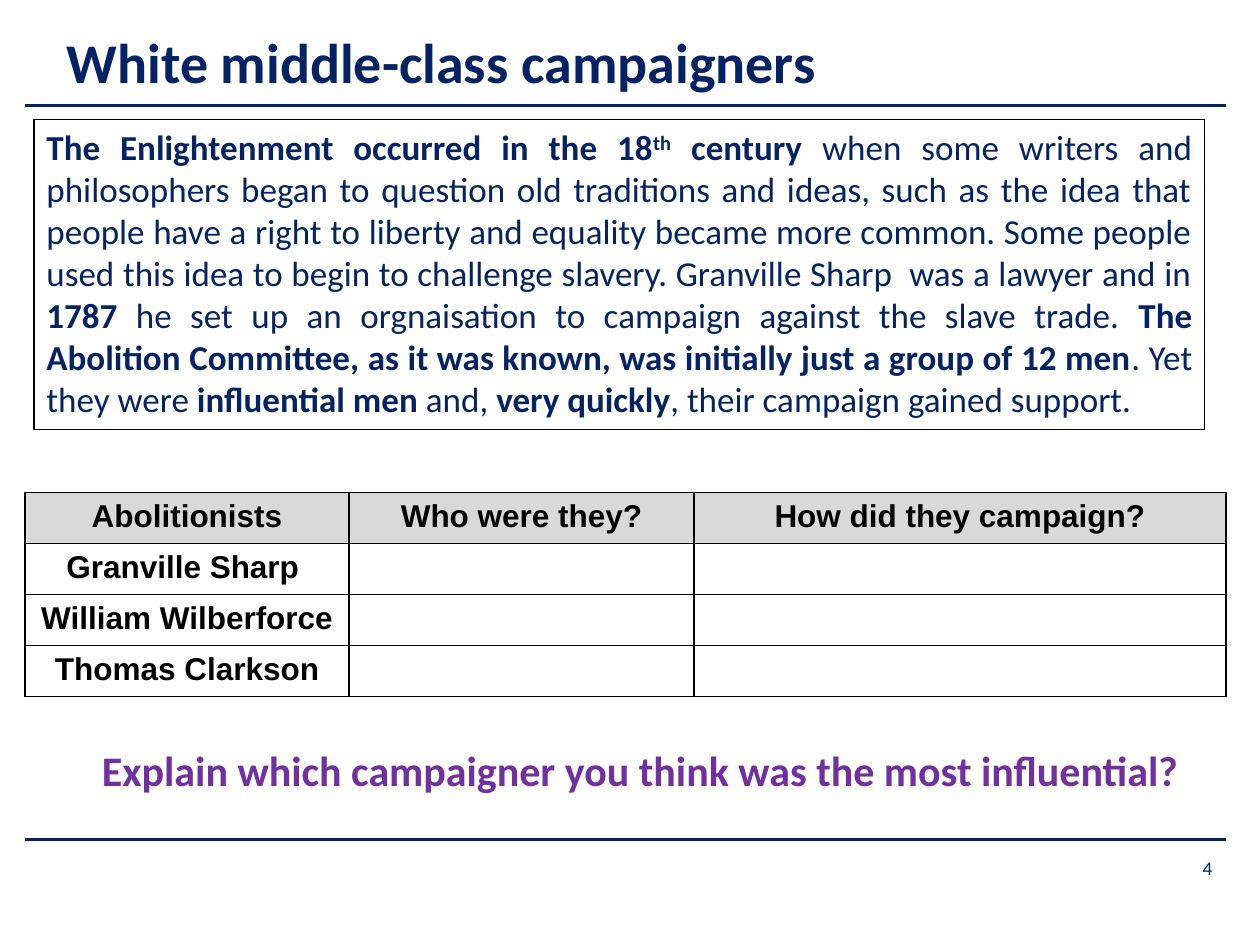
from dataclasses import dataclass

from lxml.etree import SubElement
from pptx import Presentation
from pptx.dml.color import RGBColor
from pptx.enum.shapes import MSO_CONNECTOR, MSO_SHAPE
from pptx.enum.text import MSO_ANCHOR, PP_ALIGN
from pptx.oxml.ns import qn
from pptx.util import Inches, Pt

COLUMNS, ROWS = 100, 75
SLIDE_WIDTH, SLIDE_HEIGHT = Inches(10), Inches(7.5)


@dataclass(frozen=True)
class Theme:
    navy: str = "052264"
    purple: str = "7030A0"
    black: str = "000000"
    white: str = "FFFFFF"
    header: str = "D9D9D9"
    text_font: str = "Calibri"
    table_font: str = "Arial"
    title_size: float = 32
    question_size: float = 24
    body_size: float = 20
    table_size: float = 18
    number_size: float = 11


THEME = Theme()

ENLIGHTENMENT = [
    ("The Enlightenment occurred in the 18", "bold"),
    ("th", "superscript"),
    (" century", "bold"),
    (" when some writers and philosophers began to question old traditions and "
     "ideas, such as the idea that people have a right to liberty and equality "
     "became more common. Some people used this idea to begin to challenge "
     "slavery. Granville Sharp  was a lawyer and in ", "plain"),
    ("1787", "bold"),
    (" he set up an orgnaisation to campaign against the slave trade. ", "plain"),
    ("The Abolition Committee, as it was known, was initially just a group of "
     "12 men", "bold"),
    (". Yet they were ", "plain"),
    ("influential men ", "bold"),
    ("and, ", "plain"),
    ("very quickly", "bold"),
    (", their campaign gained support. ", "plain"),
]
HEADINGS = ["Abolitionists", "Who were they?", "How did they campaign?"]
ABOLITIONISTS = ["Granville Sharp ", "William Wilberforce", "Thomas Clarkson"]


def across(columns):
    return round(SLIDE_WIDTH * columns / COLUMNS)


def down(rows):
    return round(SLIDE_HEIGHT * rows / ROWS)


def place(box):
    """Turn left, top, width and height in grid units into slide lengths."""
    left, top, width, height = box
    return across(left), down(top), across(width), down(height)


def write(frame, content, size, color=THEME.navy, font=THEME.text_font,
          bold=False, align=PP_ALIGN.LEFT, anchor=MSO_ANCHOR.TOP):
    """Fill a text frame with a string or with (text, style) pairs."""
    frame.word_wrap = True
    frame.vertical_anchor = anchor
    paragraph = frame.paragraphs[0]
    paragraph.alignment = align
    if isinstance(content, str):
        content = [(content, "bold" if bold else "plain")]
    for text, style in content:
        run = paragraph.add_run()
        run.text = text
        run.font.name = font
        run.font.size = Pt(size)
        run.font.bold = style != "plain"
        run.font.color.rgb = RGBColor.from_string(color)
        if style == "superscript":
            run.font._element.set("baseline", "30000")


def add_rule(slide, box, weight):
    left, top, width, _ = place(box)
    rule = slide.shapes.add_connector(
        MSO_CONNECTOR.STRAIGHT, left, top, left + width, top)
    rule.line.color.rgb = RGBColor.from_string(THEME.navy)
    rule.line.width = Pt(weight)
    SubElement(rule._element.spPr, qn("a:effectLst"))


def add_title(slide, box, text):
    title = slide.shapes.title
    title.left, title.top, title.width, title.height = place(box)
    write(title.text_frame, text, THEME.title_size, bold=True,
          anchor=MSO_ANCHOR.MIDDLE)


def add_text(slide, box, text, size, **style):
    write(slide.shapes.add_textbox(*place(box)).text_frame, text, size, **style)


def add_framed_text(slide, box, content):
    panel = slide.shapes.add_shape(MSO_SHAPE.RECTANGLE, *place(box))
    panel.shadow.inherit = False
    panel.fill.background()
    panel.line.color.rgb = RGBColor.from_string(THEME.black)
    panel.line.width = Pt(0.75)
    write(panel.text_frame, content, THEME.body_size, align=PP_ALIGN.JUSTIFY)


def format_cell(cell, fill):
    properties = cell._tc.get_or_add_tcPr()
    for side in ("lnL", "lnR", "lnT", "lnB"):
        border = SubElement(properties, qn(f"a:{side}"), w=str(Pt(1)))
        SubElement(SubElement(border, qn("a:solidFill")), qn("a:srgbClr"),
                   val=THEME.black)
    cell.fill.solid()
    cell.fill.fore_color.rgb = RGBColor.from_string(fill)


def add_campaigner_table(slide, box, column_widths):
    rows = [HEADINGS] + [[name, "", ""] for name in ABOLITIONISTS]
    table = slide.shapes.add_table(
        len(rows), len(HEADINGS), *place(box)).table
    for column, width in zip(table.columns, column_widths):
        column.width = across(width)
    for row_index, row in enumerate(rows):
        for column_index, text in enumerate(row):
            cell = table.cell(row_index, column_index)
            format_cell(cell, THEME.white if row_index else THEME.header)
            if text:
                write(cell.text_frame, text, THEME.table_size, bold=True,
                      color=THEME.black, font=THEME.table_font,
                      align=PP_ALIGN.CENTER)


def build_campaigners_slide(presentation):
    slide = presentation.slides.add_slide(presentation.slide_layouts[5])
    add_rule(slide, (2, 8.4, 95.3, 0), 1.5)
    add_rule(slide, (2, 66.6, 95.3, 0), 1.75)
    add_title(slide, (4.3, 2.1, 90.6, 5.5), "White middle-class campaigners")
    add_text(slide, (73.9, 66.9, 23.3, 4), "4", THEME.number_size,
             align=PP_ALIGN.RIGHT, anchor=MSO_ANCHOR.MIDDLE)
    add_framed_text(slide, (2.7, 9.5, 92.9, 24.6), ENLIGHTENMENT)
    add_campaigner_table(slide, (2, 39.1, 95.3, 16.2), (25.7, 27.4, 42.2))
    add_text(slide, (6.7, 58.6, 88.2, 5),
             "Explain which campaigner you think was the most influential?",
             THEME.question_size, color=THEME.purple, bold=True,
             align=PP_ALIGN.CENTER)


def main():
    presentation = Presentation()
    presentation.slide_width = SLIDE_WIDTH
    presentation.slide_height = SLIDE_HEIGHT
    build_campaigners_slide(presentation)
    presentation.save("out.pptx")


if __name__ == "__main__":
    main()
